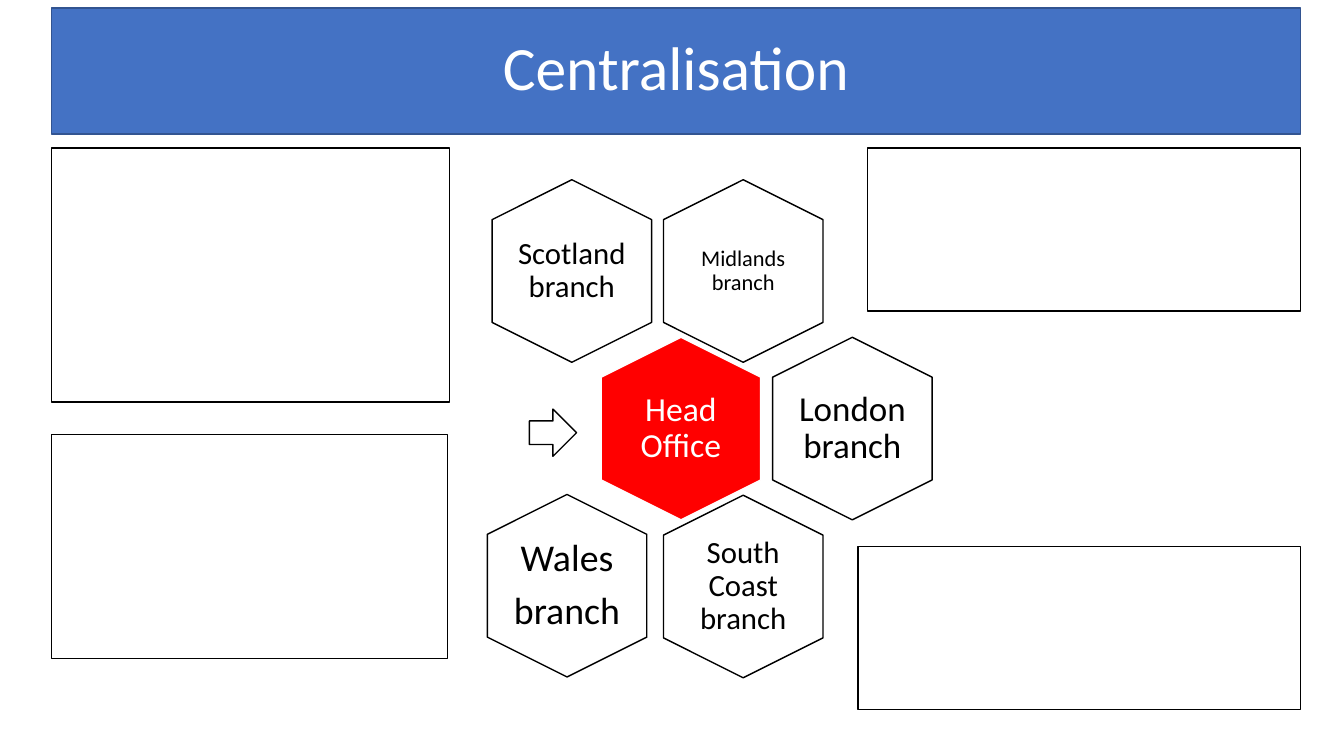
from pptx import Presentation
from pptx.dml.color import RGBColor
from pptx.enum.shapes import MSO_SHAPE as SHAPE
from pptx.enum.text import MSO_ANCHOR as ANCHOR, PP_ALIGN as ALIGN
from pptx.util import Cm, Pt

# Content
TITLE = "Centralisation"
BLUE, NAVY, RED, WHITE, BLACK = "4472C4", "325491", "FF0000", "FFFFFF", "000000"

# text, centre x, centre y, font size, inset, fill, line, font colour
OFFICES = [
    ("Midlands branch", 18.73, 6.83, 16, 0.18, WHITE, BLACK, BLACK),
    ("Scotland branch", 14.41, 6.83, 22, 0, WHITE, BLACK, BLACK),
    ("Head Office", 17.16, 10.8, 24, 0.25, RED, WHITE, WHITE),
    ("London branch", 21.48, 10.8, 25, 0, WHITE, BLACK, BLACK),
    ("South Coast branch", 18.73, 14.78, 22, 0.23, WHITE, BLACK, BLACK),
    ("Wales\nbranch", 14.29, 14.76, 27, 0, WHITE, BLACK, BLACK),
]
HEX_W, HEX_H = 4.6, 4.02  # before the quarter turn
LABEL_W, LABEL_H = 2.74, 3.18

# Empty answer boxes: left, top, width, height
LEFT, RIGHT = 1.3, 32.77
PANELS = [
    (21.87, 3.73, RIGHT - 21.87, 4.11),
    (21.62, 13.77, RIGHT - 21.62, 4.11),
    (LEFT, 3.73, 10.03, 6.4),
    (LEFT, 10.95, 9.98, 5.64),
]


def rgb(colour):
    return RGBColor.from_string(colour)


def add_outline(kind, x, y, w, h, fill, line):
    sp = s.shapes.add_shape(kind, Cm(x), Cm(y), Cm(w), Cm(h))
    sp.shadow.inherit = False
    if fill:
        sp.fill.solid()
        sp.fill.fore_color.rgb = rgb(fill)
    else:
        sp.fill.background()
    sp.line.color.rgb = rgb(line)
    sp.line.width = Pt(1)
    return sp


def write(sp, text, size, colour, inset):
    tf = sp.text_frame
    tf.text = text
    tf.word_wrap = True
    tf.vertical_anchor = ANCHOR.MIDDLE
    tf.margin_left = tf.margin_right = tf.margin_top = tf.margin_bottom = Cm(inset)
    for p in tf.paragraphs:
        p.alignment = ALIGN.CENTER
        p.line_spacing = 0.9
        p.space_after = Pt(round(size * 0.35))
        for r in p.runs:
            r.font.name = "Calibri"
            r.font.size = Pt(size)
            r.font.color.rgb = rgb(colour)


prs = Presentation()
prs.slide_width, prs.slide_height = Cm(33.87), Cm(19.05)
s = prs.slides.add_slide(prs.slide_layouts[6])

# Title bar
bar = add_outline(SHAPE.RECTANGLE, LEFT, 0.2, RIGHT - LEFT, 3.18, BLUE, NAVY)
write(bar, TITLE, 44, WHITE, 0.13)

# Hexagons, each with an upright label on the same centre
for text, cx, cy, size, inset, fill, line, colour in OFFICES:
    hexagon = add_outline(SHAPE.HEXAGON, cx - HEX_W / 2, cy - HEX_H / 2,
                          HEX_W, HEX_H, fill, line)
    hexagon.rotation = 90
    label = s.shapes.add_textbox(Cm(cx - LABEL_W / 2), Cm(cy - LABEL_H / 2),
                                 Cm(LABEL_W), Cm(LABEL_H))
    write(label, text, size, colour, inset)

# Answer boxes and arrow to head office
for panel in PANELS:
    add_outline(SHAPE.RECTANGLE, *panel, WHITE, BLACK)
add_outline(SHAPE.RIGHT_ARROW, 13.34, 10.31, 1.19, 1.19, None, BLACK)

prs.save("out.pptx")
